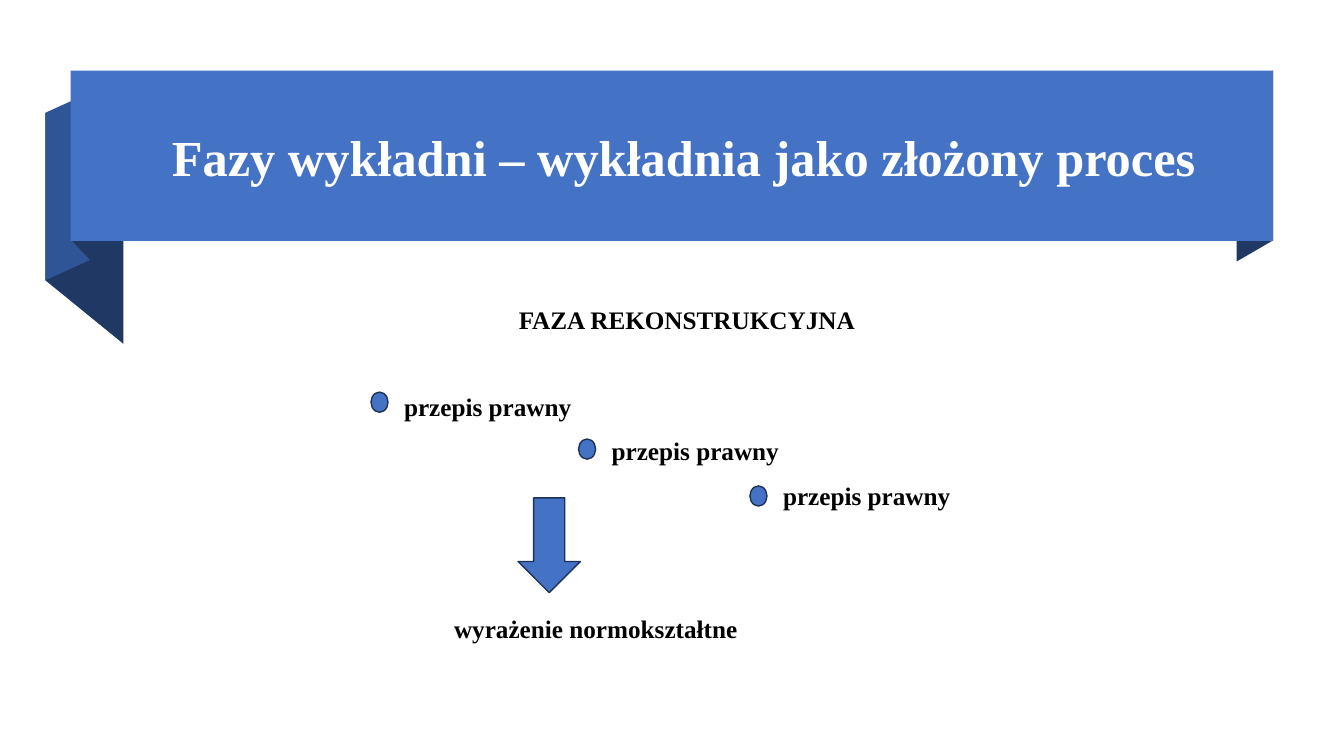
from pptx import Presentation
from pptx.dml.color import RGBColor
from pptx.enum.shapes import MSO_SHAPE
from pptx.enum.text import MSO_ANCHOR, PP_ALIGN
from pptx.util import Pt

RECTANGLE, OVAL, DOWN_ARROW = MSO_SHAPE.RECTANGLE, MSO_SHAPE.OVAL, MSO_SHAPE.DOWN_ARROW
MIDDLE = MSO_ANCHOR.MIDDLE
LEFT, CENTER = PP_ALIGN.LEFT, PP_ALIGN.CENTER

BLUE, DARK_BLUE, MID_BLUE, OUTLINE = "4472C4", "203864", "2F5597", "1E3256"
BLACK, WHITE = "000000", "FFFFFF"

# Left and right edge, top at each edge, height; measured from the banner's corner
FOLDS = [
    (833, 859, 15.1, 0, 121.3, DARK_BLUE),
    (-18, 37.8, 30.2, 75.6, 119.6, DARK_BLUE),
    (-18, 13.7, 30.2, 15.8, 119.6, MID_BLUE),
    (0.7, 13.7, 0, 13.7, 121.3, DARK_BLUE),
]
PROVISION_LEFTS = [0, 148.3, 270.7]


def color(hex_string):
    return RGBColor.from_string(hex_string)


def paint(shape, fill, line=None):
    shape.shadow.inherit = False
    shape.fill.solid()
    shape.fill.fore_color.rgb = color(fill)
    if line:
        shape.line.color.rgb = color(line)
        shape.line.width = Pt(1)
    else:
        shape.line.fill.background()


def add_figure(shapes, kind, box, fill, line=None):
    figure = shapes.add_shape(kind, *map(Pt, box))
    paint(figure, fill, line)


def add_label(page, box, text, size=18, text_color=BLACK, align=LEFT):
    frame = page.shapes.add_textbox(*map(Pt, box)).text_frame
    settings = {"word_wrap": True, "vertical_anchor": MIDDLE, "margin_left": 0,
                "margin_right": 0, "margin_top": 0, "margin_bottom": 0}
    for name, value in settings.items():
        setattr(frame, name, value)
    para = frame.paragraphs[0]
    para.alignment = align
    span = para.add_run()
    span.text = text
    for name, value in {"name": "Times New Roman", "size": Pt(size), "bold": True}.items():
        setattr(span.font, name, value)
    span.font.color.rgb = color(text_color)


def add_title_ribbon(page, box, title):
    left, top, width, height = box
    ribbon = page.shapes.add_group_shape().shapes
    for start, end, start_top, end_top, depth, fill in FOLDS:
        corners = [(start, start_top), (end, end_top),
                   (end, end_top + depth), (start, start_top + depth)]
        points = [(Pt(left + x), Pt(top + y)) for x, y in corners]
        outline = ribbon.build_freeform(*points[0])
        outline.add_line_segments(points[1:], close=True)
        paint(outline.convert_to_shape(), fill)
    add_figure(ribbon, RECTANGLE, box, BLUE)
    add_label(page, (left + 32.4, top + 9.4, width - 47.6, height - 17.3),
              title, 36, WHITE, CENTER)


def add_reconstruction_phase(page, box):
    left, top, width, height = box
    add_label(page, (left, top, width, 24), "FAZA REKONSTRUKCYJNA", align=CENTER)
    for row, offset in enumerate(PROVISION_LEFTS):
        dot_left = left + 177.2 + offset
        add_figure(page.shapes, OVAL, (dot_left, top + 64.1 + 33.5 * row, 12.2, 14.4),
                   BLUE, OUTLINE)
        add_label(page, (dot_left + 23.6, top + 62 + 32 * row, 140, 24), "przepis prawny")
    add_figure(page.shapes, DOWN_ARROW, (left + 282.2, top + 139.7, 44.6, 67.7), BLUE, OUTLINE)
    add_label(page, (left + 236.5, top + height - 24, 240, 24), "wyrażenie normokształtne")


def main():
    deck = Presentation()
    deck.slide_width, deck.slide_height = Pt(960), Pt(540)
    page = deck.slides.add_slide(deck.slide_layouts[6])
    add_title_ribbon(page, (50.4, 50.4, 859, 121.7),
                     "Fazy wykładni – wykładnia jako złożony proces")
    add_reconstruction_phase(page, (87.8, 216, 805.7, 244.5))
    deck.save("out.pptx")


if __name__ == "__main__":
    main()
